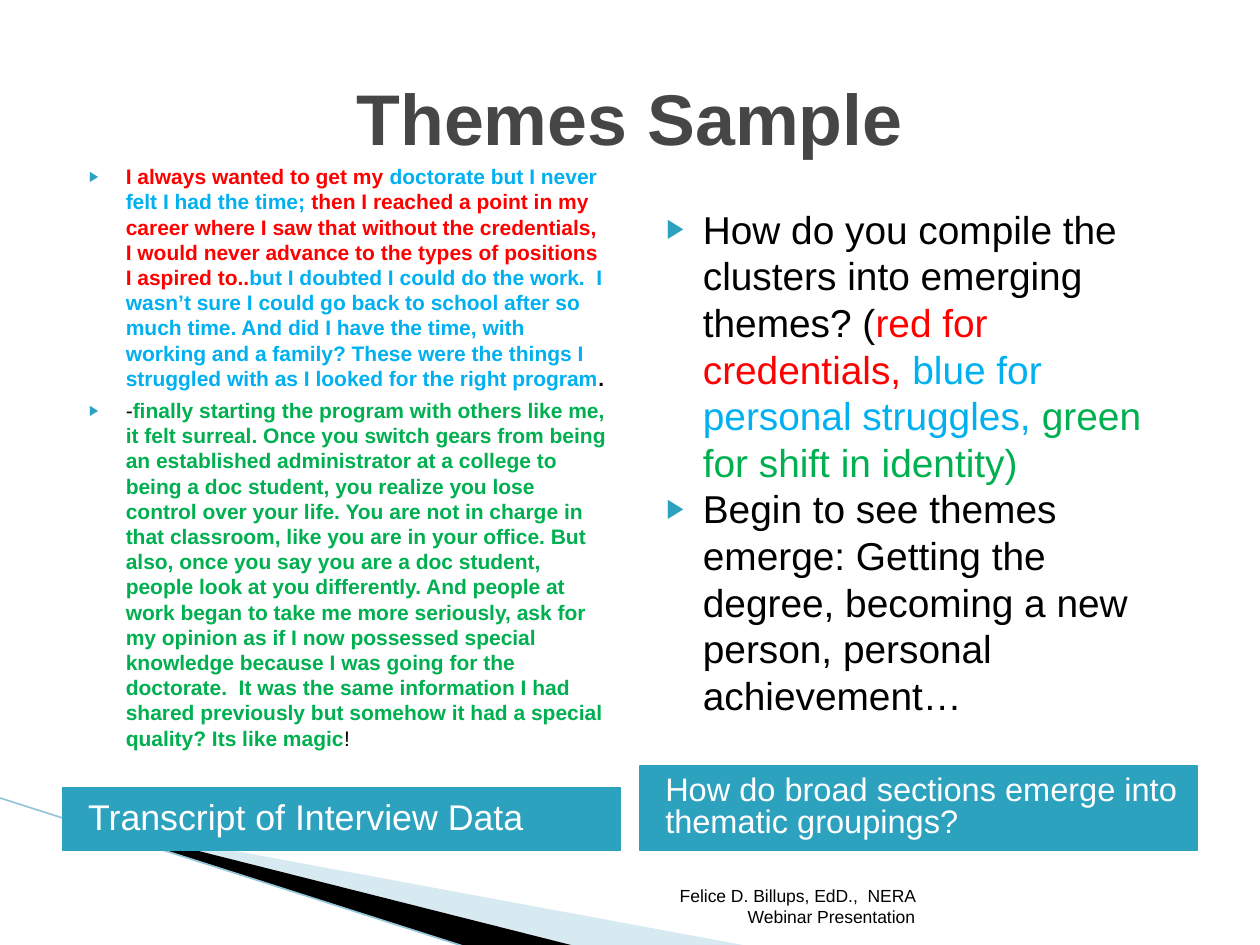
from lxml import etree
from pptx import Presentation
from pptx.dml.color import RGBColor
from pptx.enum.shapes import MSO_CONNECTOR, MSO_SHAPE
from pptx.enum.text import MSO_ANCHOR, PP_ALIGN
from pptx.oxml.ns import qn
from pptx.util import Inches, Pt

LEFT, CENTER, RIGHT = PP_ALIGN.LEFT, PP_ALIGN.CENTER, PP_ALIGN.RIGHT
TOP, MIDDLE, BOTTOM = MSO_ANCHOR.TOP, MSO_ANCHOR.MIDDLE, MSO_ANCHOR.BOTTOM

TEAL = RGBColor(0x2D, 0xA2, 0xBF)
PALE_TEAL = RGBColor(0x9C, 0xCA, 0xDC)
LINE_BLUE = RGBColor(0x93, 0xC5, 0xD8)
GRAY = RGBColor(0x46, 0x46, 0x46)
BLACK = RGBColor(0, 0, 0)
WHITE = RGBColor(0xFF, 0xFF, 0xFF)
RED = RGBColor(0xFF, 0, 0)
BLUE = RGBColor(0, 0xB0, 0xF0)
GREEN = RGBColor(0, 0xB0, 0x50)

FONT = "Arial"
WIDTH, HEIGHT = 10, 7.5
MARGIN, COLUMN, GUTTER = 0.5, 4.42, 0.16
COLUMN_LEFTS = [MARGIN + i * (COLUMN + GUTTER) for i in range(2)]
BAR_BOTTOM = 6.75

# Each paragraph is a list of (text, colour, bold) spans
TRANSCRIPT = [
    [("I always wanted to get my ", RED, True),
     ("doctorate but I never felt I had the time; ", BLUE, True),
     ("then I reached a point in my career where I saw that without the "
      "credentials, I would never advance to the types of positions I "
      "aspired to..", RED, True),
     ("but I doubted I could do the work.  I wasn’t sure I could go back to "
      "school after so much time. And did I have the time, with working and "
      "a family? These were the things I struggled with as I looked for the "
      "right program", BLUE, True),
     (".", BLACK, True)],
    [("-", BLACK, False),
     ("finally starting the program with others like me, it felt surreal. "
      "Once you switch gears from being an established administrator at a "
      "college to being a doc student, you realize you lose control over "
      "your life. You are not in charge in that classroom, like you are in "
      "your office. But also, once you say you are a doc student, people "
      "look at you differently. And people at work began to take me more "
      "seriously, ask for my opinion as if I now possessed special knowledge "
      "because I was going for the doctorate.  It was the same information I "
      "had shared previously but somehow it had a special quality? Its like "
      "magic", GREEN, True),
     ("!", BLACK, False)],
]
THEMES = [
    [("How do you compile the clusters into emerging themes? (", BLACK, False),
     ("red for credentials, ", RED, False),
     ("blue for personal struggles, ", BLUE, False),
     ("green for shift in identity)", GREEN, False)],
    [("Begin to see themes emerge: Getting the degree, becoming a new person, "
      "personal achievement…", BLACK, False)],
]


def add_bullet(para, percent):
    props = para._p.get_or_add_pPr()
    props.set("marL", str(Inches(0.4)))
    props.set("indent", str(Inches(-0.29)))
    color = etree.SubElement(props, qn("a:buClr"))
    etree.SubElement(color, qn("a:srgbClr"), val=str(TEAL))
    etree.SubElement(props, qn("a:buSzPct"), val=str(percent * 1000))
    etree.SubElement(props, qn("a:buFont"), typeface=FONT)
    etree.SubElement(props, qn("a:buChar"), char="▶")


def write_text(shape, paragraphs, size, align=LEFT, anchor=TOP, inset=0.1,
               spacing=None, before=0, bullet=None):
    frame = shape.text_frame
    frame.word_wrap = True
    frame.vertical_anchor = anchor
    frame.margin_left, frame.margin_right = Inches(inset), Inches(0.1)
    frame.margin_top = frame.margin_bottom = Inches(0.05)
    for i, spans in enumerate(paragraphs):
        para = frame.add_paragraph() if i else frame.paragraphs[0]
        para.alignment = align
        if spacing:
            para.line_spacing = spacing
        if i and before:
            para.space_before = Pt(before)
        if bullet:
            add_bullet(para, bullet)
        for text, color, bold in spans:
            span = para.add_run()
            span.text = text
            span.font.name, span.font.size = FONT, Pt(size)
            span.font.bold = bold
            span.font.color.rgb = color


def add_text(page, box, paragraphs, size, **text_format):
    shape = page.shapes.add_textbox(*map(Inches, box))
    write_text(shape, paragraphs, size, **text_format)


def add_bar(page, left, height, label, size, spacing):
    """Heading bar that stands on the shared lower edge of the columns."""
    box = (left, BAR_BOTTOM - height, COLUMN, height)
    bar = page.shapes.add_shape(MSO_SHAPE.RECTANGLE, *map(Inches, box))
    bar.shadow.inherit = False
    bar.fill.solid()
    bar.fill.fore_color.rgb = TEAL
    bar.line.color.rgb = TEAL
    bar.line.width = Pt(0.75)
    write_text(bar, [[(label, WHITE, False)]], size, anchor=MIDDLE,
               inset=0.2, spacing=spacing)


def add_wedge(page, points, color, opacity=None):
    corners = [(Inches(x), Inches(y)) for x, y in points]
    builder = page.shapes.build_freeform(*corners[0])
    builder.add_line_segments(corners[1:], close=True)
    wedge = builder.convert_to_shape()
    wedge.shadow.inherit = False
    wedge.fill.solid()
    wedge.fill.fore_color.rgb = color
    wedge.line.fill.background()
    if opacity:
        fill_color = wedge._element.spPr.find(".//" + qn("a:srgbClr"))
        etree.SubElement(fill_color, qn("a:alpha"), val=str(opacity * 1000))


def add_swoosh(page):
    """Corner decoration: two wedges and a thin slanted line."""
    add_wedge(page, [(0.55, 6.51), (5.95, 7.51), (4.56, 7.51), (0.55, 6.5)],
              PALE_TEAL, opacity=40)
    add_wedge(page, [(0.53, 6.49), (4.57, 7.51), (3.72, 7.52), (0.54, 6.5)],
              BLACK)
    ends = map(Inches, (-0.01, 6.33, 3.71, 7.52))
    line = page.shapes.add_connector(MSO_CONNECTOR.STRAIGHT, *ends)
    line.line.color.rgb = LINE_BLUE
    line.line.width = Pt(0.95)
    etree.SubElement(line._element.spPr, qn("a:effectLst"))


def main():
    deck = Presentation()
    deck.slide_width, deck.slide_height = Inches(WIDTH), Inches(HEIGHT)
    page = deck.slides.add_slide(deck.slide_layouts[6])
    left, right = COLUMN_LEFTS

    add_swoosh(page)

    # Title
    add_text(page, (MARGIN, 0.3, WIDTH - 2 * MARGIN, 1.25),
             [[("Themes Sample", GRAY, True)]], 41, align=CENTER,
             anchor=MIDDLE)

    # Heading bars under the columns
    add_bar(page, left, 0.5, "Transcript of Interview Data", 20.4, 0.9)
    add_bar(page, right, 0.67,
            "How do broad sections emerge into thematic groupings?", 18.6, 0.8)

    # Column texts
    add_text(page, (left, 1.25, COLUMN, 4.92), TRANSCRIPT, 12, before=4,
             bullet=68)
    add_text(page, (right, 1.58, COLUMN, 4.31), THEMES, 22.2, bullet=69)

    # Footer
    add_text(page, (4.79, 7.01, 2.57, 0.4),
             [[("Felice D. Billups, EdD.,  NERA Webinar Presentation",
                BLACK, False)]], 10, align=RIGHT, anchor=BOTTOM)

    deck.save("out.pptx")


if __name__ == "__main__":
    main()
